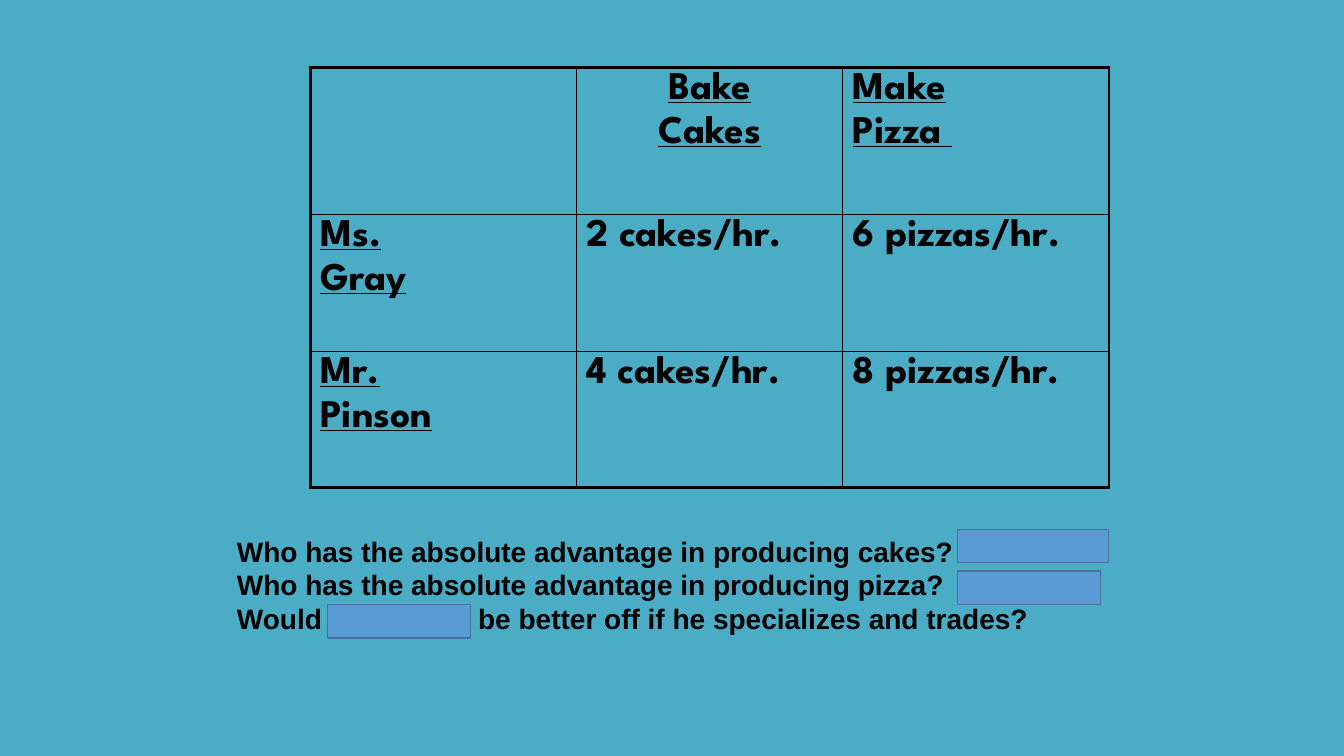
from dataclasses import dataclass

from lxml.etree import SubElement
from pptx import Presentation
from pptx.dml.color import RGBColor as Rgb
from pptx.enum.shapes import MSO_SHAPE as Shape
from pptx.enum.text import PP_ALIGN as Align
from pptx.oxml.ns import qn
from pptx.util import Cm, Pt


@dataclass(frozen=True)
class Theme:
    """Colours, fonts and sizes of the slide."""
    background: str = "4BACC6"
    ink: str = "000000"
    cover: str = "5B9BD5"
    cover_edge: str = "43739E"
    table_font: str = "League Spartan"
    question_font: str = "Arial"
    table_size: float = 28
    question_size: float = 20
    table_gap: float = 5.6
    thick: float = 2.25
    thin: float = 1


def write_text(frame, lines, *, font, size, color, underline=False,
               align=Align.LEFT, gap=0, tab_stop=None):
    """Fill a text frame with one bold paragraph per line."""
    for index, line in enumerate(lines):
        paragraph = frame.add_paragraph() if index else frame.paragraphs[0]
        paragraph.alignment = align
        paragraph.space_before = Pt(gap)
        if tab_stop is not None:
            stops = SubElement(paragraph._p.get_or_add_pPr(), qn("a:tabLst"))
            SubElement(stops, qn("a:tab"), pos=str(Cm(tab_stop)), algn="l")
        run = paragraph.add_run()
        run.text = line
        run.font.name = font
        run.font.size = Pt(size)
        run.font.bold = True
        run.font.underline = underline
        run.font.color.rgb = Rgb.from_string(color)


class SlideBuilder:
    """Draws the elements of one slide in one theme."""

    def __init__(self, slide, theme):
        """Keep slide and theme, and paint the background."""
        self.slide = slide
        self.theme = theme
        fill = slide.background.fill
        fill.solid()
        fill.fore_color.rgb = Rgb.from_string(theme.background)

    def border(self, cell, side, width):
        """Draw one side of a table cell."""
        properties = cell._tc.get_or_add_tcPr()
        line = SubElement(properties, qn(f"a:ln{side}"), w=str(Pt(width)))
        paint = SubElement(line, qn("a:solidFill"))
        SubElement(paint, qn("a:srgbClr"), val=self.theme.ink)

    def table(self, rows, left, top, column_width, row_heights):
        """Add a table with thick outer and thin inner borders."""
        theme = self.theme
        last_row, last_column = len(rows) - 1, len(rows[0]) - 1
        table = self.slide.shapes.add_table(
            len(rows), len(rows[0]), Cm(left), Cm(top),
            Cm(column_width * len(rows[0])), Cm(sum(row_heights))).table
        for column in table.columns:
            column.width = Cm(column_width)
        for r, (row, height) in enumerate(zip(rows, row_heights)):
            table.rows[r].height = Cm(height)
            for c, lines in enumerate(row):
                cell = table.cell(r, c)
                outer = {"L": c == 0, "R": c == last_column,
                         "T": r == 0, "B": r == last_row}
                for side, is_outer in outer.items():
                    self.border(cell, side, theme.thick if is_outer else theme.thin)
                cell.fill.background()
                write_text(cell.text_frame, lines, font=theme.table_font,
                           size=theme.table_size, color=theme.ink,
                           underline=r == 0 or c == 0, gap=theme.table_gap,
                           align=Align.CENTER if (r, c) == (0, 1) else Align.LEFT)

    def questions(self, lines, left, top, width, height, tab_stop):
        """Add the block of questions, with a tab stop after the answer gap."""
        frame = self.slide.shapes.add_textbox(
            Cm(left), Cm(top), Cm(width), Cm(height)).text_frame
        frame.word_wrap = True
        write_text(frame, lines, font=self.theme.question_font,
                   size=self.theme.question_size, color=self.theme.ink,
                   tab_stop=tab_stop)

    def answer_box(self, left, top, width, height=0.84):
        """Add a plain rectangle in the place of an answer."""
        box = self.slide.shapes.add_shape(
            Shape.RECTANGLE, Cm(left), Cm(top), Cm(width), Cm(height))
        box.shadow.inherit = False
        box.fill.solid()
        box.fill.fore_color.rgb = Rgb.from_string(self.theme.cover)
        box.line.color.rgb = Rgb.from_string(self.theme.cover_edge)
        box.line.width = Pt(self.theme.thin)


def main():
    """Build and save the slide."""
    deck = Presentation()
    deck.slide_width, deck.slide_height = Cm(33.87), Cm(19.05)
    builder = SlideBuilder(deck.slides.add_slide(deck.slide_layouts[6]), Theme())
    output_rates = [
        [[], ["Bake", "Cakes"], ["Make", "Pizza "]],
        [["Ms.", "Gray"], ["2 cakes/hr."], ["6 pizzas/hr."]],
        [["Mr.", "Pinson"], ["4 cakes/hr."], ["8 pizzas/hr."]],
    ]
    builder.table(output_rates, 7.82, 1.7, 6.71, [3.7, 3.45, 3.44])
    builder.questions([
        "Who has the absolute advantage in producing cakes?",
        "Who has the absolute advantage in producing pizza?",
        "Would\tbe better off if he specializes and trades?",
    ], 5.72, 13.34, 22.86, 2.82, tab_stop=6.08)
    for left, top, width in [(24.13, 13.34, 3.81), (24.13, 14.39, 3.6),
                             (8.26, 15.24, 3.6)]:
        builder.answer_box(left, top, width)
    deck.save("out.pptx")


if __name__ == "__main__":
    main()
